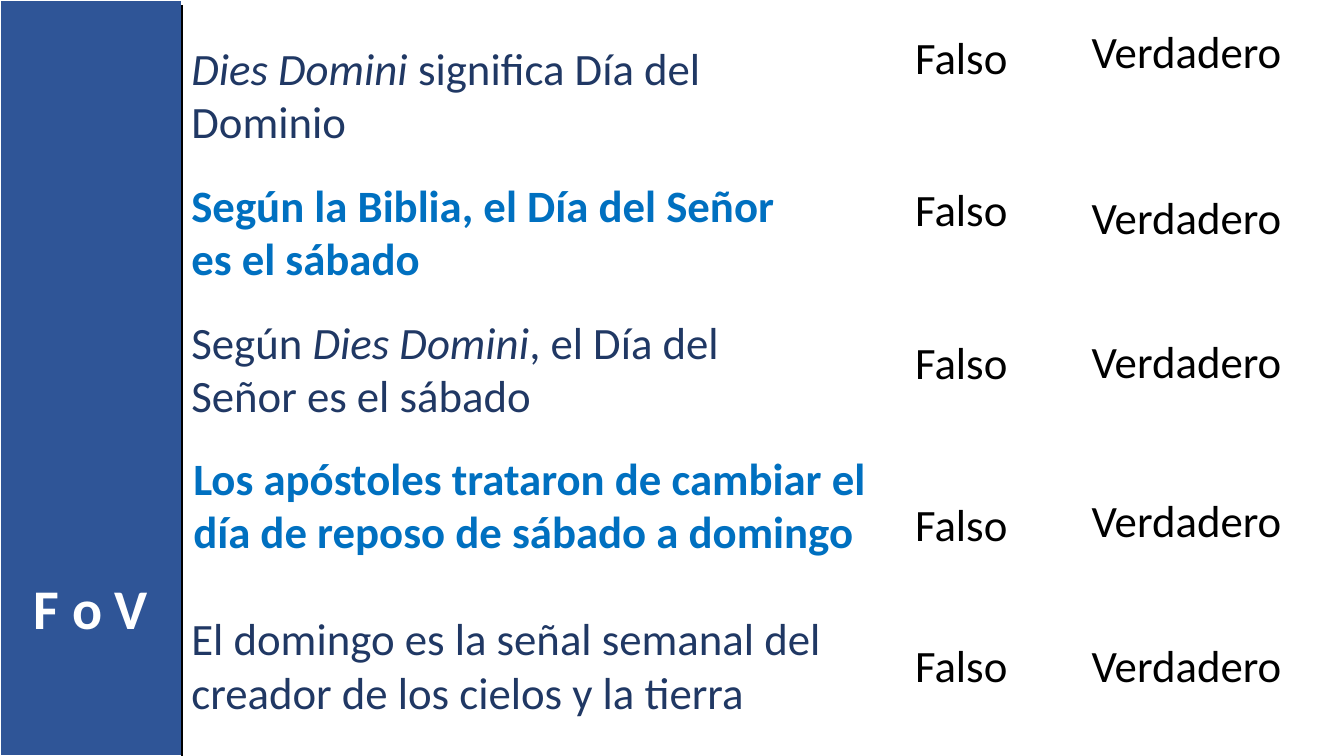
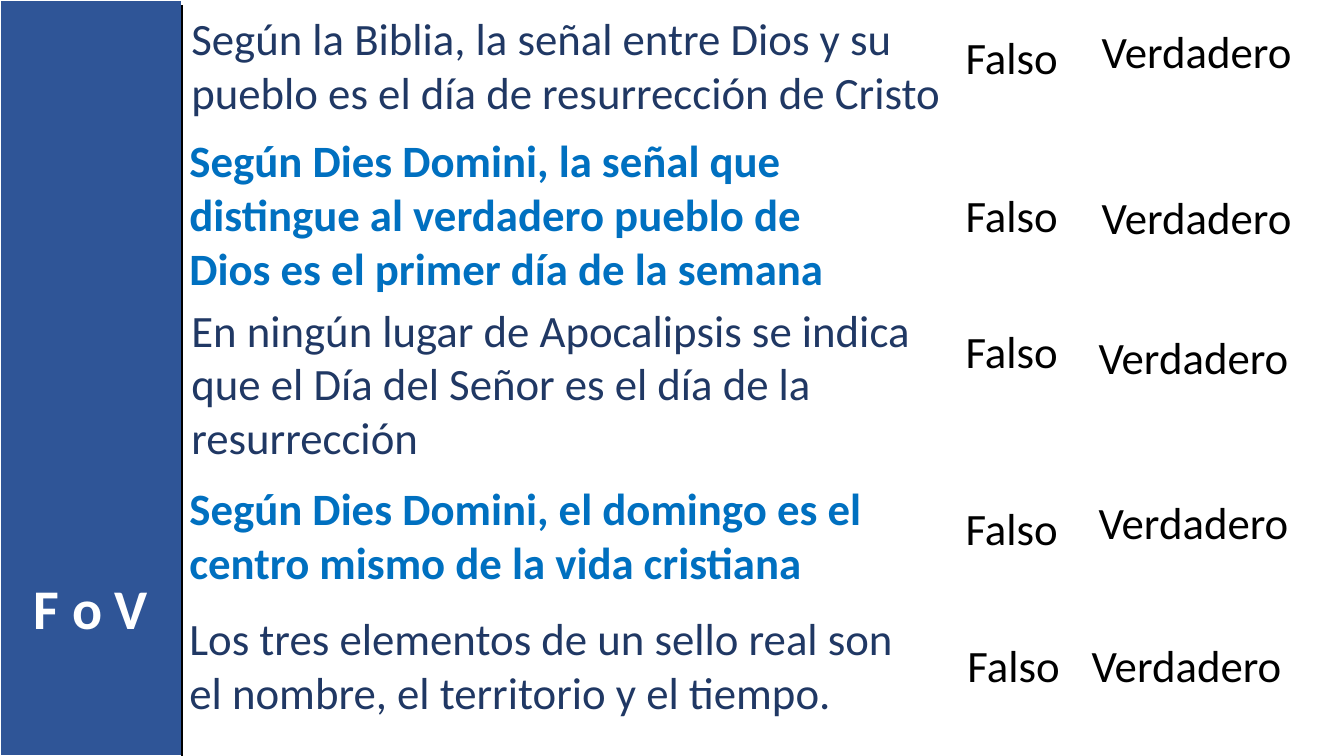
from dataclasses import dataclass

from lxml.etree import SubElement
from pptx import Presentation
from pptx.dml.color import RGBColor as RGB
from pptx.enum.shapes import MSO_CONNECTOR as Link, MSO_SHAPE as Shape
from pptx.enum.text import MSO_AUTO_SIZE as Fit, PP_ALIGN as Align
from pptx.oxml.ns import qn
from pptx.util import Pt


@dataclass(frozen=True)
class Theme:
    font: str = "Calibri"
    body: int = 32
    head: int = 40
    band: RGB = RGB(0x2F, 0x55, 0x97)
    navy: RGB = RGB(0x20, 0x38, 0x64)
    blue: RGB = RGB(0x00, 0x70, 0xC0)
    black: RGB = RGB(0, 0, 0)
    white: RGB = RGB(255, 255, 255)


@dataclass(frozen=True)
class Row:
    text: str
    left: float
    top: float
    width: float
    no: tuple
    yes: tuple
    lines: int = 2


THEME = Theme()
WIDE, HIGH = 960, 540
SIDE = 130
EDGE = 936

FIRST = [
    Row("*Dies Domini *significa Día del Dominio",
        129.6, 25.2, 396.7, (646.6, 18), (772.6, 13.7)),
    Row("Según la Biblia, el Día del Señor es el sábado",
        129.6, 123.1, 448.6, (646.6, 126), (772.6, 131.8)),
    Row("Según *Dies Domini*, el Día del Señor es el sábado",
        129.6, 221, 396.7, (646.6, 235.4), (772.6, 234.7)),
    Row("Los apóstoles trataron de cambiar el día de reposo de sábado a domingo",
        131, 318.2, 501.8, (646.6, 351.4), (772.6, 348.5)),
    Row("El domingo es la señal semanal del creador de los cielos y la tierra",
        129.6, 432.7, 469.4, (646.6, 452.2), (772.6, 452.2)),
]
SECOND = [
    Row("Según la Biblia, la señal entre Dios y su pueblo es el día de "
        "resurrección de Cristo",
        129.6, 4.3, 553, (682.6, 18), (779.8, 13.7)),
    Row("Según Dies Domini, la señal que distingue al verdadero pueblo de "
        "Dios es el primer día de la semana",
        128.2, 91.4, 503.3, (682.6, 130.3), (779.8, 131.8), 3),
    Row("En ningún lugar de Apocalipsis se indica que el Día del Señor es el "
        "día de la resurrección",
        129.6, 212.4, 534.2, (682.6, 227.5), (777.6, 231.8), 3),
    Row("Según Dies Domini, el domingo es el centro mismo de la vida cristiana",
        128.2, 339.8, 501.8, (682.6, 354.2), (777.6, 349.9)),
    Row("Los tres elementos de un sello real son el nombre, el territorio y "
        "el tiempo.",
        128.2, 432.7, 531.4, (684, 452.2), (772.6, 452.2)),
]


def add_text(slide, text, left, top, width, *, lines=1, size=THEME.body,
             color=THEME.black, bold=False, align=Align.LEFT):
    high = 7.2 + lines * size * 1.21
    box = slide.shapes.add_textbox(Pt(left), Pt(top), Pt(width), Pt(high))
    frame = box.text_frame
    frame.word_wrap = True
    frame.auto_size = Fit.SHAPE_TO_FIT_TEXT
    para = frame.paragraphs[0]
    para.alignment = align
    for place, part in enumerate(text.split("*")):
        if part:
            run = para.add_run()
            run.text = part
            font = run.font
            font.name, font.size = THEME.font, Pt(size)
            font.bold, font.italic = bold, place % 2 == 1
            font.color.rgb = color


def add_band(slide):
    band = slide.shapes.add_shape(Shape.RECTANGLE, 0, 0, Pt(SIDE), Pt(HIGH))
    band.shadow.inherit = False
    band.fill.solid()
    band.fill.fore_color.rgb = THEME.band
    band.line.color.rgb = THEME.white
    band.line.width = Pt(1.5)


def add_rule(slide):
    rule = slide.shapes.add_connector(
        Link.STRAIGHT, Pt(SIDE), Pt(3.6), Pt(SIDE), Pt(HIGH))
    rule.line.color.rgb = THEME.black
    rule.line.width = Pt(1)
    SubElement(rule._element.spPr, qn("a:effectLst"))


def add_quiz(deck, rows, span):
    slide = deck.slides.add_slide(deck.slide_layouts[6])
    add_band(slide)
    add_text(slide, "F o V", 0, 406, SIDE, size=THEME.head,
             color=THEME.white, bold=True, align=Align.CENTER)
    add_rule(slide)
    for count, row in enumerate(rows):
        even = count % 2 == 1
        add_text(slide, row.text, row.left, row.top, row.width,
                 lines=row.lines, bold=even,
                 color=THEME.blue if even else THEME.navy)
        add_text(slide, "Falso", *row.no, span)
        add_text(slide, "Verdadero", *row.yes, EDGE - row.yes[0])


def main():
    deck = Presentation()
    deck.slide_width, deck.slide_height = Pt(WIDE), Pt(HIGH)
    add_quiz(deck, FIRST, 126)
    add_quiz(deck, SECOND, 88)
    deck.save("out.pptx")


if __name__ == "__main__":
    main()
